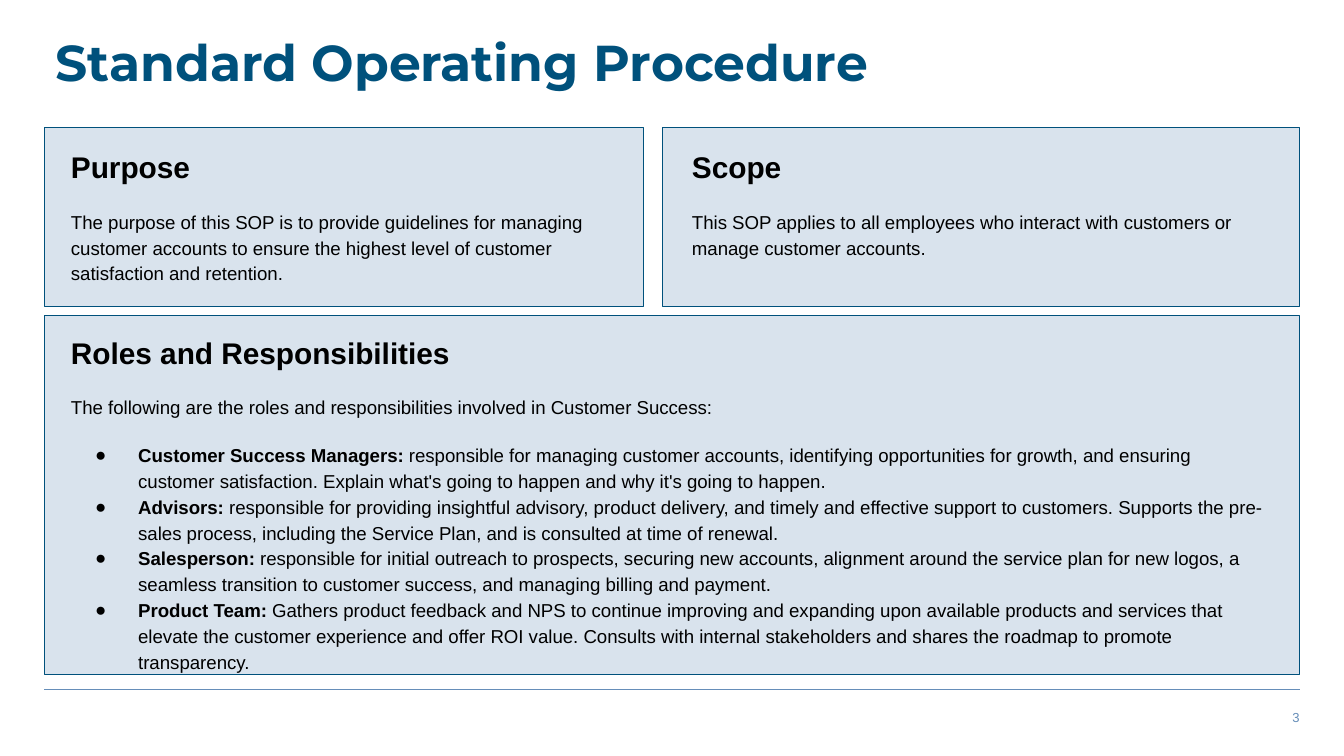
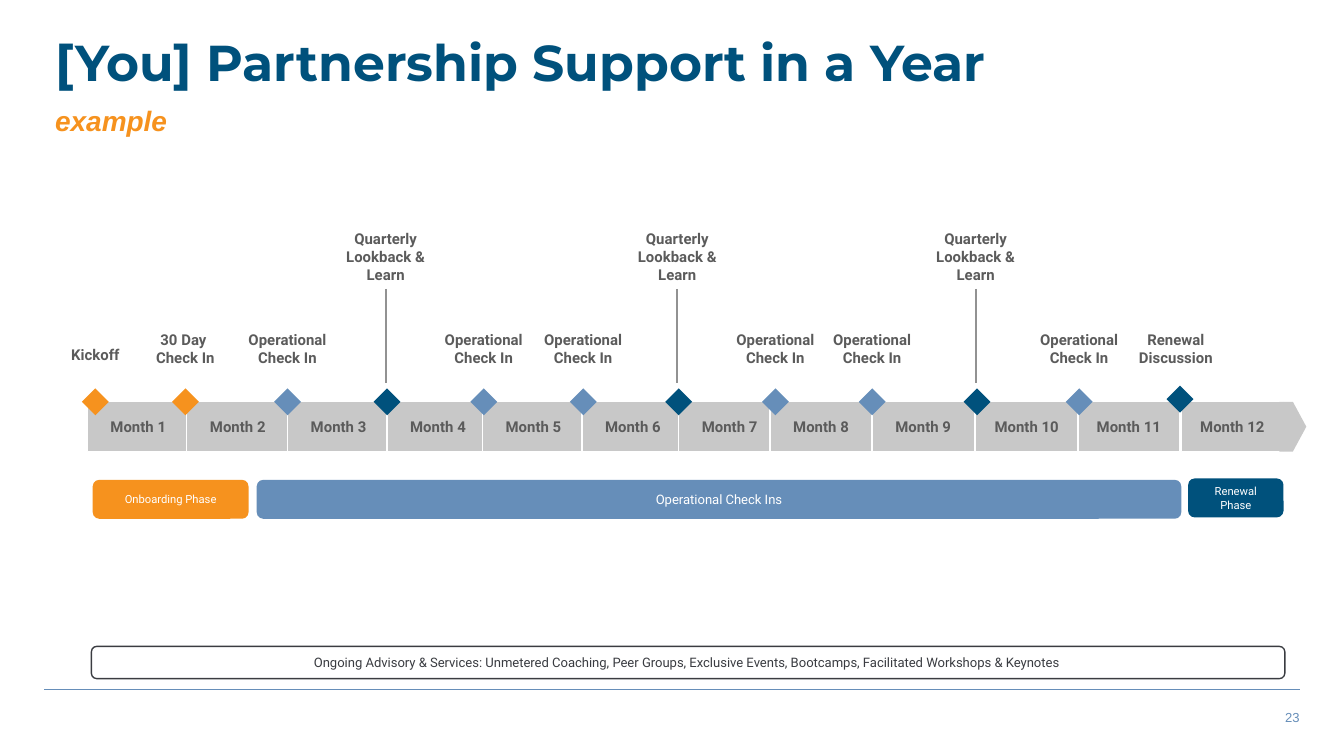
from dataclasses import dataclass

from lxml.etree import SubElement
from pptx import Presentation
from pptx.dml.color import RGBColor
from pptx.enum.shapes import MSO_CONNECTOR as Connector, MSO_SHAPE as Preset
from pptx.enum.text import MSO_ANCHOR as Anchor, MSO_AUTO_SIZE as AutoSize, PP_ALIGN as Align
from pptx.oxml.ns import qn
from pptx.util import Inches, Pt

NAVY = RGBColor(0x00, 0x51, 0x7C)
BLUE = RGBColor(0x66, 0x8E, 0xB9)
PALE_BLUE = RGBColor(0xB3, 0xC6, 0xDC)
ORANGE = RGBColor(0xF6, 0x92, 0x1E)
SILVER = RGBColor(0xC8, 0xC8, 0xC8)
GRAY = RGBColor(0x92, 0x92, 0x92)
SLATE = RGBColor(0x5B, 0x5B, 0x5B)
CHARCOAL = RGBColor(0x3A, 0x3C, 0x41)
BLACK = RGBColor(0x00, 0x00, 0x00)
WHITE = RGBColor(0xFF, 0xFF, 0xFF)

# Text styles
TITLE = dict(name="Montserrat", size=Pt(27), bold=True, color=NAVY)
SUBTITLE = dict(name="Arial", size=Pt(15), bold=True, italic=True, color=ORANGE)
PAGE = dict(name="Arial", size=Pt(7), color=BLUE)
HEADING = dict(name="Arial", size=Pt(16), bold=True, color=BLACK)
BODY = dict(name="Arial", size=Pt(10), bold=False, color=BLACK)
STRONG = {**BODY, "bold": True}
LABEL = dict(name="Roboto", size=Pt(8), bold=True, color=SLATE)
PHASE = dict(name="Roboto", size=Pt(6), color=WHITE)
PHASE_WIDE = {**PHASE, "size": Pt(7)}
NOTE = {**PHASE_WIDE, "color": CHARCOAL}

# Paragraph styles
TIGHT = dict(line_spacing=0.9)
LOOSE = dict(line_spacing=1.15)
HEADING_SPACE = {**LOOSE, "space_before": Pt(18)}
INTRO_SPACE = {**LOOSE, "space_before": Pt(12)}
BODY_SPACE = {**INTRO_SPACE, "space_after": Pt(12)}
CENTERED = dict(alignment=Align.CENTER)

# Insets: sides, then top and bottom
SLIM = (0.08, 0.04)
PANEL = (0.1, 0.1)
DEFAULT = (0.1, 0.05)
NONE = (0, 0)


class Deck:
    """Holds the shared style and the slide being drawn."""

    def __init__(self):
        self.presentation = Presentation()
        self.presentation.slide_width = Inches(10)
        self.presentation.slide_height = Inches(10) * 9 // 16
        self.slide = None

    def new_slide(self, title, title_width, page):
        layout = self.presentation.slide_layouts[6]
        self.slide = self.presentation.slides.add_slide(layout)
        self.line((0.33, 5.13), (9.67, 5.13), BLUE)
        self.text((5.75, 5.24, 4, 0.19), [(dict(alignment=Align.RIGHT), [(page, PAGE)])], SLIM)
        self.text((0.33, 0.24, title_width, 0.57), [(TIGHT, [(title, TITLE)])], SLIM)

    def fill_text(self, shape, paragraphs, insets, anchor):
        frame = shape.text_frame
        sides, ends = (Inches(inset) for inset in insets)
        settings = dict(word_wrap=True, vertical_anchor=anchor, margin_left=sides,
                        margin_right=sides, margin_top=ends, margin_bottom=ends)
        for name, value in settings.items():
            setattr(frame, name, value)
        for index, (spacing, runs) in enumerate(paragraphs):
            paragraph = frame.add_paragraph() if index else frame.paragraphs[0]
            for name, value in spacing.items():
                if name == "bullet":
                    self.bullet(paragraph, value)
                else:
                    setattr(paragraph, name, value)
            for words, style in runs:
                self.run(paragraph, words, style)

    def run(self, paragraph, words, style):
        for index, row in enumerate(words.split("\n")):
            if index:
                paragraph.add_line_break()
            run = paragraph.add_run()
            run.text = row
            for name, value in style.items():
                if name == "color":
                    run.font.color.rgb = value
                else:
                    setattr(run.font, name, value)

    def bullet(self, paragraph, mark):
        properties = paragraph._p.get_or_add_pPr()
        properties.set("marL", str(Inches(0.5)))
        properties.set("indent", str(Inches(-0.32)))
        color = SubElement(properties, qn("a:buClr"))
        SubElement(color, qn("a:srgbClr"), val=str(BLACK))
        SubElement(properties, qn("a:buSzPts"), val="1000")
        SubElement(properties, qn("a:buFont"), typeface="Arial")
        SubElement(properties, qn("a:buChar"), char=mark)

    def text(self, box, paragraphs, insets=DEFAULT, anchor=Anchor.TOP, grow=False):
        shape = self.slide.shapes.add_textbox(*map(Inches, box))
        self.fill_text(shape, paragraphs, insets, anchor)
        if grow:
            shape.text_frame.auto_size = AutoSize.SHAPE_TO_FIT_TEXT

    def shape(self, preset, box, fill=None, line=None, words=None, style=None,
              insets=DEFAULT, adjust=None, alpha=None):
        shape = self.slide.shapes.add_shape(preset, *map(Inches, box))
        shape.shadow.inherit = False
        if adjust is not None:
            shape.adjustments[0] = adjust
        if fill is None:
            shape.fill.background()
        else:
            shape.fill.solid()
            shape.fill.fore_color.rgb = fill
        if alpha is not None:
            color = shape._element.spPr.find(qn("a:solidFill"))[0]
            SubElement(color, qn("a:alpha"), val=str(alpha * 1000))
        if line is None:
            shape.line.fill.background()
        else:
            shape.line.color.rgb = line
            shape.line.width = Pt(0.75)
        if words:
            self.fill_text(shape, [(CENTERED, [(words, style)])], insets, Anchor.MIDDLE)

    def panel(self, box):
        self.shape(Preset.RECTANGLE, box, PALE_BLUE, NAVY, alpha=49)

    def bar(self, box, words, style, fill=None, line=None):
        self.shape(Preset.ROUNDED_RECTANGLE, box, fill, line, words, style, adjust=0.17)

    def line(self, start, end, color):
        connector = self.slide.shapes.add_connector(
            Connector.STRAIGHT, *map(Inches, (*start, *end)))
        connector.line.color.rgb = color
        connector.line.width = Pt(1)
        SubElement(connector._element.spPr, qn("a:effectLst"))


@dataclass
class Milestone:
    center: float
    label: str
    color: RGBColor
    label_shift: float = 0
    label_top: float = 2.41
    label_size: tuple = (1.06, 0.37)
    diamond_top: float = 2.89
    stem: bool = False


def check_in(center):
    return Milestone(center, "Operational Check In", BLUE)


def lookback(center):
    return Milestone(center, "Quarterly Lookback & Learn", NAVY, label_shift=-0.01,
                     label_top=1.66, label_size=(1.06, 0.5), stem=True)


ROLES = [
    ("Customer Success Managers: ",
     "responsible for managing customer accounts, identifying opportunities for growth, and "
     "ensuring customer satisfaction. Explain what's going to happen and why it's going to happen."),
    ("Advisors: ",
     "responsible for providing insightful advisory, product delivery, and timely and effective "
     "support to customers. Supports the pre-sales process, including the Service Plan, and is "
     "consulted at time of renewal."),
    ("Salesperson: ",
     "responsible for initial outreach to prospects, securing new accounts, alignment around the "
     "service plan for new logos, a seamless transition to customer success, and managing billing "
     "and payment."),
    ("Product Team: ",
     "Gathers product feedback and NPS to continue improving and expanding upon available products "
     "and services that elevate the customer experience and offer ROI value. Consults with internal "
     "stakeholders and shares the roadmap to promote transparency."),
]

MONTH_LEFTS = [0.65, 1.39, 2.14, 2.88, 3.59, 4.33, 5.05, 5.73, 6.49, 7.26, 8.02, 8.79]

MILESTONES = [
    Milestone(0.71, "Kickoff", ORANGE, label_top=2.52, label_size=(0.79, 0.24)),
    Milestone(1.38, "30 Day \nCheck In", ORANGE),
    check_in(2.14), lookback(2.88), check_in(3.6), check_in(4.34), lookback(5.05),
    check_in(5.77), check_in(6.49), lookback(7.27), check_in(8.03),
    Milestone(8.78, "Renewal Discussion", NAVY, label_shift=-0.03, diamond_top=2.87),
]


def add_procedure(deck):
    deck.new_slide("Standard Operating Procedure", 6.39, "3")

    # Panels
    for box in [(0.33, 2.35, 9.34, 2.67), (4.93, 0.95, 4.74, 1.33), (0.33, 0.95, 4.46, 1.33)]:
        deck.panel(box)

    # Purpose and scope
    sections = [
        ((0.43, 0.97, 4.36, 1.24), "Purpose",
         "The purpose of this SOP is to provide guidelines for managing customer accounts to "
         "ensure the highest level of customer satisfaction and retention."),
        ((5.05, 0.97, 4.62, 1.04), "Scope",
         "This SOP applies to all employees who interact with customers or manage customer "
         "accounts."),
    ]
    for box, heading, body in sections:
        deck.text(box, [(HEADING_SPACE, [(heading, HEADING)]), (BODY_SPACE, [(body, BODY)])],
                  PANEL, grow=True)

    # Roles
    intro = "The following are the roles and responsibilities involved in Customer Success:"
    paragraphs = [(HEADING_SPACE, [("Roles and Responsibilities", HEADING)]),
                  (INTRO_SPACE, [(intro, BODY)])]
    for index, (role, duty) in enumerate(ROLES):
        spacing = LOOSE if index else INTRO_SPACE
        paragraphs.append(({**spacing, "bullet": "●"}, [(role, STRONG), (duty, BODY)]))
    deck.text((0.43, 2.35, 9.06, 2.76), paragraphs, PANEL, grow=True)


def add_year(deck):
    deck.new_slide("[You] Partnership Support in a Year", 8.2, "23")
    deck.text((0.33, 0.76, 6.39, 0.33),
              [({**TIGHT, "space_before": Pt(8)}, [("example", SUBTITLE)])], SLIM)

    # Month band with its arrow tip
    for month, left in enumerate(MONTH_LEFTS, start=1):
        deck.shape(Preset.RECTANGLE, (left, 2.99, 0.76, 0.37), SILVER, WHITE,
                   f"Month {month}", LABEL, NONE)
    deck.shape(Preset.PENTAGON, (9.52, 2.99, 0.2, 0.37), SILVER, adjust=0.5)

    # Milestones
    for milestone in MILESTONES:
        deck.shape(Preset.DIAMOND, (milestone.center - 0.1, milestone.diamond_top, 0.2, 0.2),
                   milestone.color)
        width, height = milestone.label_size
        middle = milestone.center + milestone.label_shift
        deck.text((middle - width / 2, milestone.label_top, width, height),
                  [(CENTERED, [(milestone.label, LABEL)])], anchor=Anchor.MIDDLE, grow=True)
        if milestone.stem:
            deck.line((middle, 2.15), (middle, 2.85), GRAY)

    # Phases and ongoing services
    deck.bar((0.69, 3.57, 1.16, 0.29), "Onboarding Phase", PHASE, ORANGE)
    deck.bar((1.91, 3.57, 6.88, 0.29), "Operational Check Ins", PHASE_WIDE, BLUE)
    deck.bar((8.84, 3.56, 0.71, 0.29), "Renewal Phase", PHASE, NAVY)
    deck.bar((0.68, 4.81, 8.88, 0.24),
             "Ongoing Advisory & Services: Unmetered Coaching, Peer Groups, Exclusive Events, "
             "Bootcamps, Facilitated Workshops & Keynotes ", NOTE, line=CHARCOAL)


def main():
    deck = Deck()
    add_procedure(deck)
    add_year(deck)
    deck.presentation.save("out.pptx")


if __name__ == "__main__":
    main()
